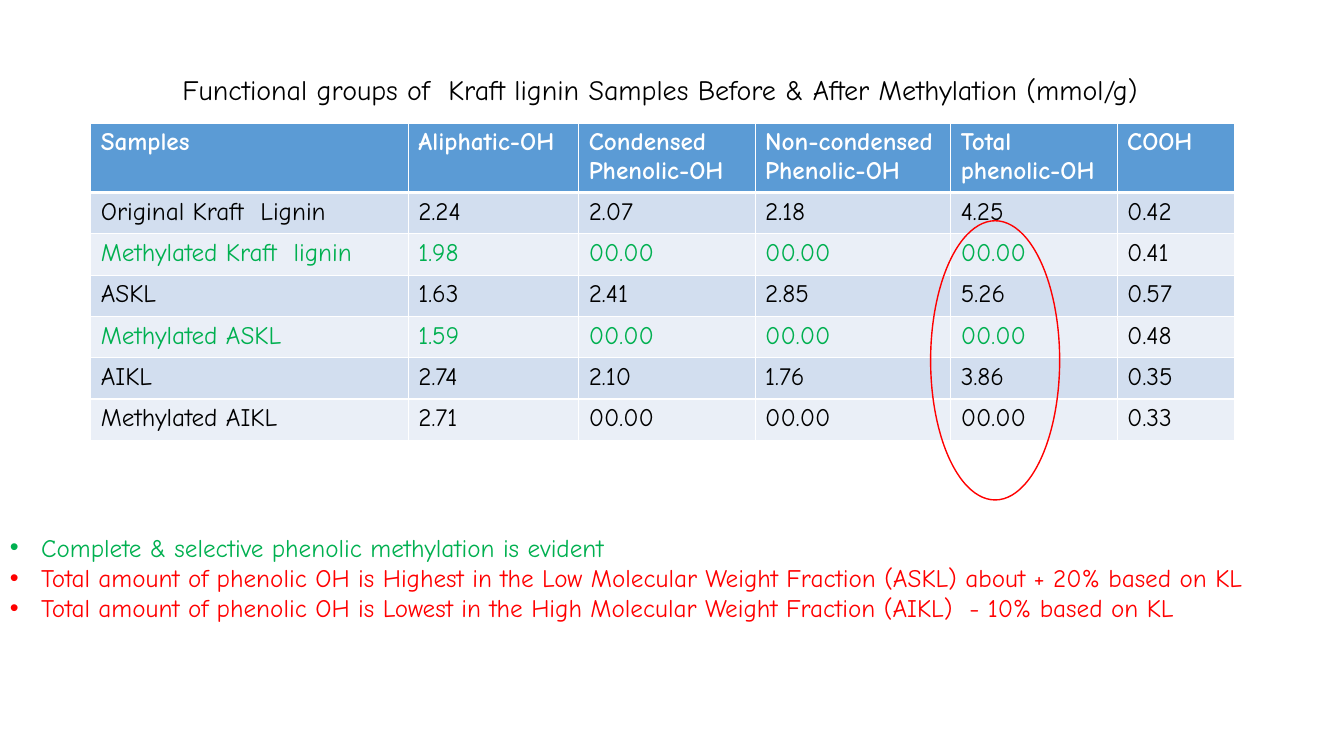
from lxml import etree
from pptx import Presentation
from pptx import util as u
from pptx.dml.color import RGBColor
from pptx.enum import shapes, text
from pptx.oxml import ns

FONT = "Comic Neue"
BLACK = RGBColor(0x00, 0x00, 0x00)
WHITE = RGBColor(0xFF, 0xFF, 0xFF)
GREEN = RGBColor(0x00, 0xB0, 0x50)
RED = RGBColor(0xFF, 0x00, 0x00)
HEADER_BLUE = RGBColor(0x5B, 0x9B, 0xD5)
BANDS = (RGBColor(0xD2, 0xDE, 0xEF), RGBColor(0xEA, 0xEF, 0xF7))

TITLE = "Functional groups of  Kraft lignin Samples Before & After Methylation (mmol/g)"
HEADERS = ("Samples", "Aliphatic-OH", "Condensed Phenolic-OH",
           "Non-condensed Phenolic-OH", "Total phenolic-OH", "COOH")
SAMPLES = (
    ("Original Kraft  Lignin", "2.24", "2.07", "2.18", "4.25", "0.42"),
    ("Methylated Kraft  lignin", "1.98", "00.00", "00.00", "00.00", "0.41"),
    ("ASKL", "1.63", "2.41", "2.85", "5.26", "0.57"),
    ("Methylated ASKL", "1.59", "00.00", "00.00", "00.00", "0.48"),
    ("AIKL", "2.74", "2.10", "1.76", "3.86", "0.35"),
    ("Methylated AIKL", "2.71", "00.00", "00.00", "00.00", "0.33"),
)
GREEN_SAMPLES = ("Methylated Kraft  lignin", "Methylated ASKL")
COLUMN_WIDTHS = (3.15, 1.69, 1.75, 1.94, 1.65, 1.17)
HEADER_HEIGHT, ROW_HEIGHT = 0.69, 0.41
FINDINGS = (
    ("Complete & selective phenolic methylation is evident", GREEN),
    ("Total amount of phenolic OH is Highest in the Low Molecular Weight Fraction (ASKL) "
     "about + 20% based on KL", RED),
    ("Total amount of phenolic OH is Lowest in the High Molecular Weight Fraction (AIKL)  "
     "- 10% based on KL", RED),
)


def inches(box):
    return [u.Inches(length) for length in box]


def set_font(paragraph, size, color, bold=False):
    font = paragraph.font
    font.name, font.size, font.bold = FONT, u.Pt(size), bold
    font.color.rgb = color


def add_title(slide, box):
    title = slide.shapes.title
    title.left, title.top, title.width, title.height = inches(box)
    frame = title.text_frame
    frame.text = TITLE
    frame.word_wrap = True
    frame.auto_size = text.MSO_AUTO_SIZE.NONE
    frame.vertical_anchor = text.MSO_ANCHOR.TOP
    frame.paragraphs[0].alignment = text.PP_ALIGN.CENTER
    set_font(frame.paragraphs[0], 20, BLACK)


def set_borders(cell, top, bottom):
    properties = cell._tc.get_or_add_tcPr()
    for side, width in (("L", 1), ("R", 1), ("T", top), ("B", bottom)):
        line = etree.SubElement(properties, ns.qn(f"a:ln{side}"), w=str(u.Pt(width)))
        fill = etree.SubElement(line, ns.qn("a:solidFill"))
        etree.SubElement(fill, ns.qn("a:srgbClr"), val=str(WHITE))


def fill_cell(cell, words, fill, color, bold=False):
    cell.text = words
    cell.fill.solid()
    cell.fill.fore_color.rgb = fill
    set_font(cell.text_frame.paragraphs[0], 18, color, bold)


def add_sample_table(slide, left, top):
    row_count = len(SAMPLES) + 1
    height = HEADER_HEIGHT + ROW_HEIGHT * len(SAMPLES)
    table = slide.shapes.add_table(row_count, len(HEADERS),
                                   *inches((left, top, sum(COLUMN_WIDTHS), height))).table
    for column, width in zip(table.columns, COLUMN_WIDTHS):
        column.width = u.Inches(width)
    for index, row in enumerate(table.rows):
        row.height = u.Inches(ROW_HEIGHT if index else HEADER_HEIGHT)

    # Header row, set off by a thick line
    for cell, header in zip(table.rows[0].cells, HEADERS):
        set_borders(cell, 1, 3)
        fill_cell(cell, header, HEADER_BLUE, WHITE, True)

    # Banded samples; the last column stays black
    for index, sample in enumerate(SAMPLES):
        for column, words in enumerate(sample):
            cell = table.cell(index + 1, column)
            is_green = sample[0] in GREEN_SAMPLES and column < len(HEADERS) - 1
            set_borders(cell, 1 if index else 3, 1)
            fill_cell(cell, words, BANDS[index % 2], GREEN if is_green else BLACK)


def add_findings(slide, box):
    frame = slide.shapes.add_textbox(*inches(box)).text_frame
    frame.word_wrap = True
    for index, (finding, color) in enumerate(FINDINGS):
        paragraph = frame.add_paragraph() if index else frame.paragraphs[0]
        paragraph.text = finding
        set_font(paragraph, 18, color)
        properties = paragraph._p.get_or_add_pPr()
        indent = u.Inches(0.31)
        properties.set("marL", str(indent))
        properties.set("indent", str(-indent))
        bullet_font = etree.Element(ns.qn("a:buFont"), typeface="Arial")
        bullet = etree.Element(ns.qn("a:buChar"), char="•")
        properties.insert(0, bullet_font)
        bullet_font.addnext(bullet)


def add_highlight(slide, box):
    ellipse = slide.shapes.add_shape(shapes.MSO_SHAPE.OVAL, *inches(box))
    ellipse.shadow.inherit = False
    ellipse.fill.background()
    ellipse.line.color.rgb = RED
    ellipse.line.width = u.Pt(1)


def main():
    presentation = Presentation()
    presentation.slide_width = u.Inches(13.33)
    presentation.slide_height = u.Inches(7.5)
    slide = presentation.slides.add_slide(presentation.slide_layouts[5])
    add_title(slide, (1.16, 0.67, 10.78, 0.44))
    add_sample_table(slide, 0.9, 1.22)
    add_findings(slide, (0, 5.23, 13.33, 1.31))
    add_highlight(slide, (9.23, 2.19, 1.28, 2.77))
    presentation.save("out.pptx")


if __name__ == "__main__":
    main()
